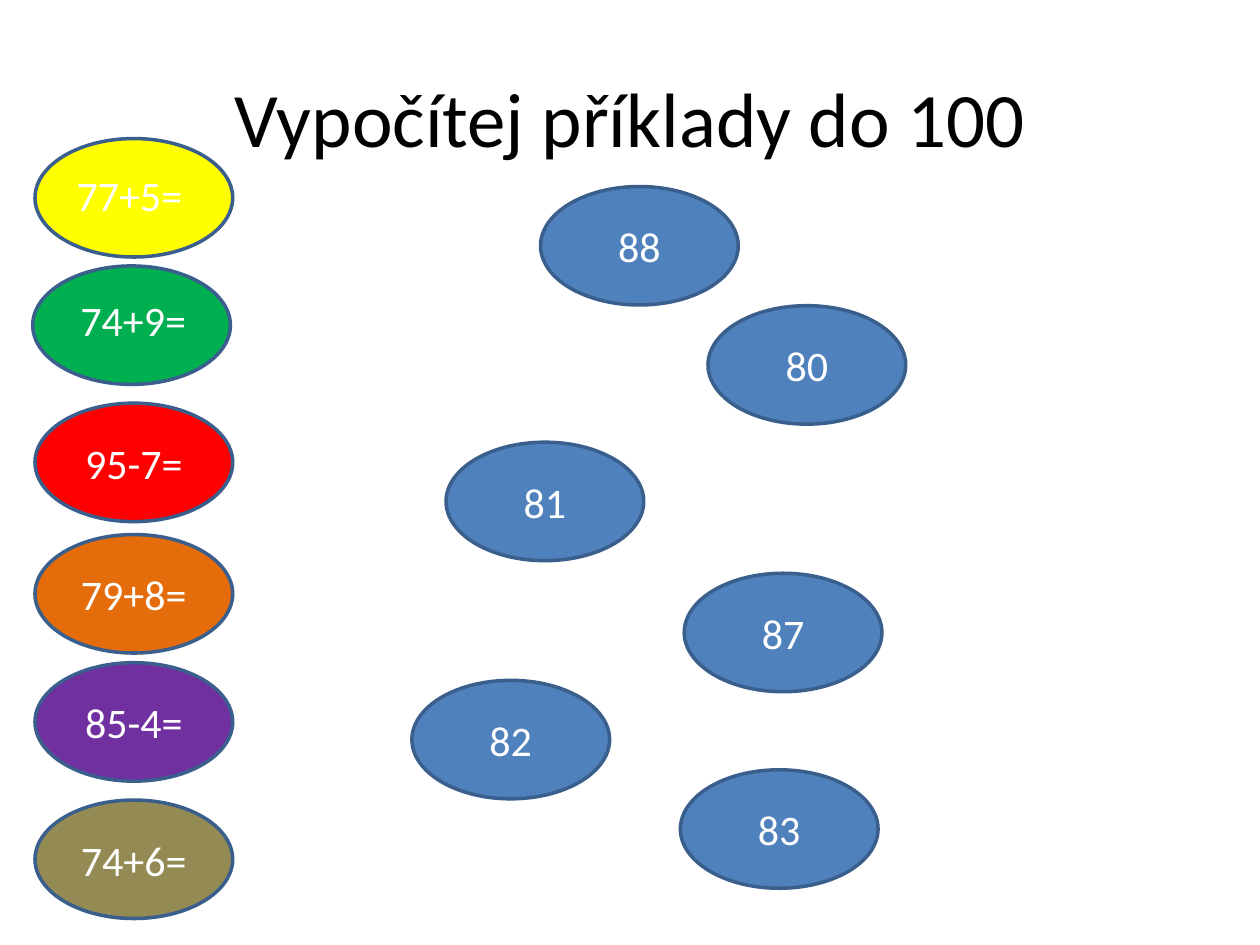
from dataclasses import dataclass

from pptx import Presentation
from pptx import util as u
from pptx.dml.color import RGBColor
from pptx.enum import shapes, text


@dataclass(frozen=True)
class Theme:
    font: str = "Calibri"
    head: int = 44
    body: int = 24
    dark: str = "000000"
    light: str = "FFFFFF"
    edge: str = "3A5F8C"
    blue: str = "4F81BD"
    yellow: str = "FFFF00"
    green: str = "00B050"
    red: str = "FF0000"
    orange: str = "E46C0A"
    purple: str = "7030A0"
    olive: str = "948A54"


class Board:
    def __init__(self, deck, theme):
        self.theme = theme
        self.slide = deck.slides.add_slide(deck.slide_layouts[6])

    def add_words(self, frame, words, size, color, align):
        para = frame.paragraphs[0]
        para.alignment = align
        run = para.add_run()
        run.text = words
        run.font.name = self.theme.font
        run.font.size = u.Pt(size)
        run.font.color.rgb = RGBColor.from_string(color)

    def label(self, box, words, size, color, align=text.PP_ALIGN.LEFT,
              anchor=text.MSO_ANCHOR.TOP):
        frame = self.slide.shapes.add_textbox(*map(u.Pt, box)).text_frame
        frame.word_wrap = True
        frame.vertical_anchor = anchor
        self.add_words(frame, words, size, color, align)

    def title(self, box, words):
        self.label(box, words, self.theme.head, self.theme.dark,
                   text.PP_ALIGN.CENTER, text.MSO_ANCHOR.MIDDLE)

    def oval(self, left, top, fill, words=None):
        box = map(u.Pt, (left, top, 113, 67.7))
        oval = self.slide.shapes.add_shape(shapes.MSO_SHAPE.OVAL, *box)
        oval.shadow.inherit = False
        oval.fill.solid()
        oval.fill.fore_color.rgb = RGBColor.from_string(fill)
        oval.line.color.rgb = RGBColor.from_string(self.theme.edge)
        oval.line.width = u.Pt(2)
        if words:
            frame = oval.text_frame
            frame.vertical_anchor = text.MSO_ANCHOR.MIDDLE
            self.add_words(frame, words, self.theme.body, self.theme.light,
                           text.PP_ALIGN.CENTER)


def main():
    deck = Presentation()
    deck.slide_width, deck.slide_height = u.Pt(720), u.Pt(540)
    theme = Theme()
    board = Board(deck, theme)
    board.title((36, 21.6, 648, 90), "Vypočítej příklady do 100")

    sums = [
        (20, 79.2, theme.yellow, None),
        (18.7, 152, theme.green, None),
        (20, 230.4, theme.red, "95-7="),
        (20, 305.5, theme.orange, "79+8="),
        (20, 378.7, theme.purple, "85-4="),
        (20, 457.2, theme.olive, "74+6="),
    ]
    for item in sums:
        board.oval(*item)
    for box, words in [
        ((36.7, 93.6, 136, 36), "77+5="),
        ((38.9, 164.9, 85, 36), "74+9="),
    ]:
        board.label(box, words, theme.body, theme.light)

    totals = [
        (308.9, 106.6, "88"),
        (404.6, 174.7, "80"),
        (254.9, 252.7, "81"),
        (391, 327.6, "87"),
        (235.4, 388.8, "82"),
        (388.8, 439.9, "83"),
    ]
    for left, top, words in totals:
        board.oval(left, top, theme.blue, words)

    deck.save("out.pptx")


if __name__ == "__main__":
    main()
